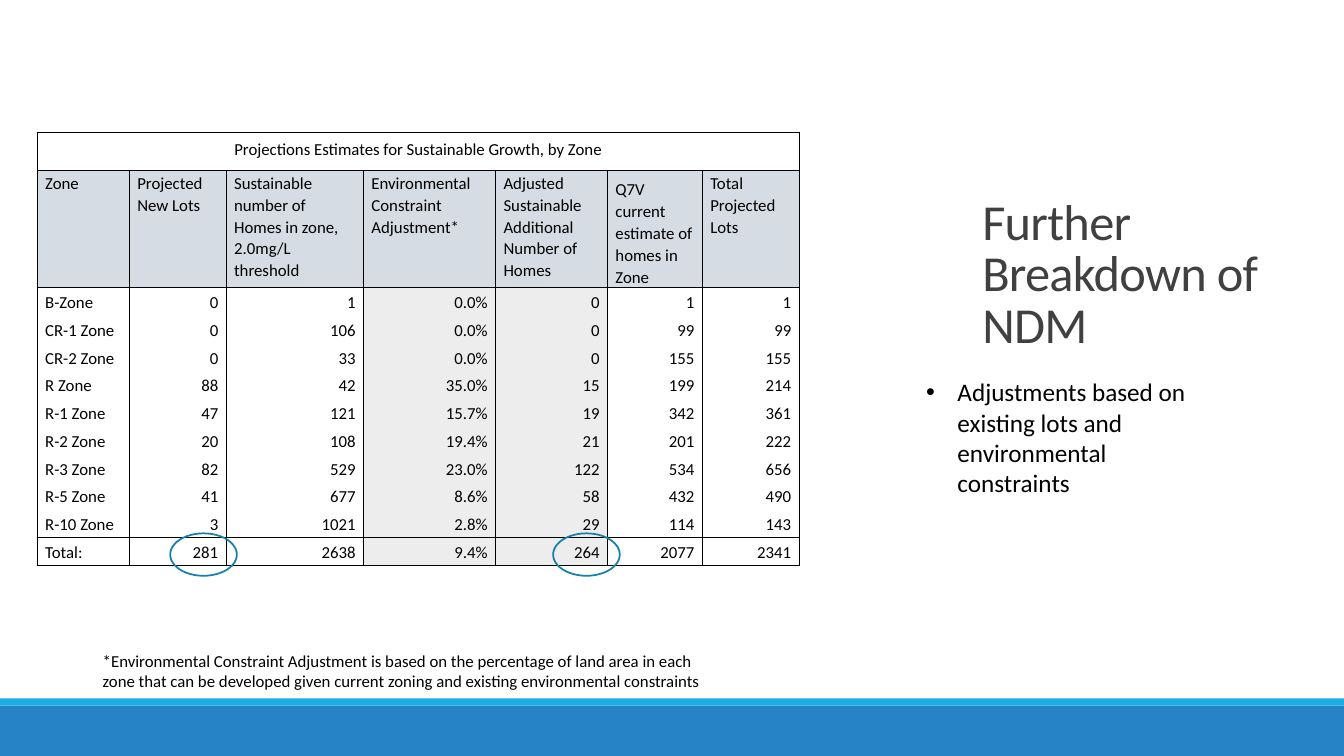
from lxml.etree import SubElement as Sub
from pptx import Presentation
from pptx.dml.color import RGBColor as Rgb
from pptx.enum.shapes import MSO_SHAPE as Geo
from pptx.enum.text import MSO_ANCHOR as Anchor, MSO_AUTO_SIZE as Fit, PP_ALIGN as Align
from pptx.oxml.ns import qn
from pptx.util import Cm, Pt

HUES = {
    "band": "2683C6", "strip": "1CADE4", "ring": "1580A9", "title": "404040",
    "text": "000000", "head": "D6DCE4", "shade": "EDEDED",
}
CAPTION = "Projections Estimates for Sustainable Growth, by Zone"
HEADS = [
    "Zone", "Projected New Lots",
    "Sustainable number of Homes in zone, 2.0mg/L threshold",
    "Environmental Constraint Adjustment*",
    "Adjusted Sustainable Additional Number of Homes",
    "Q7V current estimate of homes in Zone", "Total Projected Lots",
]
ZONES = [
    ("B-Zone", "0", "1", "0.0%", "0", "1", "1"),
    ("CR-1 Zone", "0", "106", "0.0%", "0", "99", "99"),
    ("CR-2 Zone", "0", "33", "0.0%", "0", "155", "155"),
    ("R Zone", "88", "42", "35.0%", "15", "199", "214"),
    ("R-1 Zone", "47", "121", "15.7%", "19", "342", "361"),
    ("R-2 Zone", "20", "108", "19.4%", "21", "201", "222"),
    ("R-3 Zone", "82", "529", "23.0%", "122", "534", "656"),
    ("R-5 Zone", "41", "677", "8.6%", "58", "432", "490"),
    ("R-10 Zone", "3", "1021", "2.8%", "29", "114", "143"),
    ("Total:", "281", "2638", "9.4%", "264", "2077", "2341"),
]
WIDTHS = [2.32, 2.44, 3.46, 3.33, 2.82, 2.39, 2.44]
HEIGHTS = [0.97, 2.95] + [0.7] * len(ZONES)
SHADED = (3, 4)


def hue(name):
    return Rgb.from_string(HUES[name])


def assign(item, values):
    for key, value in values.items():
        setattr(item, key, value)


def write(frame, text, size=12, color="text", **para):
    """Put one formatted paragraph in the frame and return it."""
    line = frame.paragraphs[0]
    assign(line, para)
    run = line.add_run()
    run.text = text
    assign(run.font, {"name": "Calibri", "size": Pt(size)})
    run.font.color.rgb = hue(color)
    return line


def add_bar(slide, top, height, color):
    bar = slide.shapes.add_shape(Geo.RECTANGLE, 0, Cm(top), Cm(33.87), Cm(height))
    bar.shadow.inherit = False
    bar.fill.solid()
    bar.fill.fore_color.rgb = hue(color)
    bar.line.fill.background()


def add_ring(slide, left, top):
    ring = slide.shapes.add_shape(Geo.OVAL, Cm(left), Cm(top), Cm(1.68), Cm(1.07))
    ring.shadow.inherit = False
    ring.fill.background()
    ring.line.color.rgb = hue("ring")
    ring.line.width = Pt(1.25)


def add_text(slide, box, text, size):
    frame = slide.shapes.add_textbox(*map(Cm, box)).text_frame
    frame.word_wrap = True
    return write(frame, text, size)


def add_bullet(line):
    props = line._p.get_or_add_pPr()
    props.set("marL", str(Cm(0.79)))
    props.set("indent", str(Cm(-0.79)))
    Sub(props, qn("a:buFont"), typeface="Arial")
    Sub(props, qn("a:buChar"), char="•")


def set_title(slide):
    title = slide.shapes.title
    assign(title, {"left": Cm(24.5), "top": Cm(4.93),
                   "width": Cm(9.37), "height": Cm(5.64)})
    frame = title.text_frame
    assign(frame, {"word_wrap": True, "auto_size": Fit.NONE,
                   "vertical_anchor": Anchor.MIDDLE, "margin_bottom": Cm(1.7)})
    line = write(frame, "Further Breakdown of NDM", 36, "title",
                 alignment=Align.LEFT, line_spacing=0.85)
    line.runs[0]._r.get_or_add_rPr().set("spc", "-50")


def set_edges(cell, row):
    """Rule every side, leaving the zone rows open between each other."""
    last = len(HEIGHTS) - 1
    edges = {"L": True, "R": True,
             "T": row <= 2 or row == last, "B": row <= 1 or row >= last - 1}
    props = cell._tc.get_or_add_tcPr()
    for side, shown in edges.items():
        edge = Sub(props, qn(f"a:ln{side}"), w=str(Pt(1)))
        if shown:
            Sub(Sub(edge, qn("a:solidFill")), qn("a:srgbClr"), val=HUES["text"])
        else:
            Sub(edge, qn("a:noFill"))


def fill_cell(cell, row, col, text):
    set_edges(cell, row)
    color = "head" if row == 1 else "shade" if row > 1 and col in SHADED else None
    if color:
        cell.fill.solid()
        cell.fill.fore_color.rgb = hue(color)
    else:
        cell.fill.background()
    pad = (0.28, 0.15, 0.15) if row == 0 else (0.2, 0.03, 0)
    side, top, base = map(Cm, pad)
    anchor = Anchor.MIDDLE if row > 1 else Anchor.TOP
    if (row, col) == (1, 5):
        anchor = Anchor.BOTTOM
    assign(cell, {"margin_left": side, "margin_right": side, "margin_top": top,
                  "margin_bottom": base, "vertical_anchor": anchor})
    align = Align.CENTER if row == 0 else Align.RIGHT if row > 1 and col else Align.LEFT
    if text:
        write(cell.text_frame, text, alignment=align, line_spacing=1.07)


def add_grid(slide):
    rows = [[CAPTION] + [""] * (len(HEADS) - 1), HEADS, *ZONES]
    table = slide.shapes.add_table(
        len(rows), len(HEADS), Cm(0.94), Cm(3.33),
        Cm(sum(WIDTHS)), Cm(sum(HEIGHTS))).table
    assign(table, {"first_row": False, "horz_banding": False})
    for col, width in zip(table.columns, WIDTHS):
        col.width = Cm(width)
    for row, height in zip(table.rows, HEIGHTS):
        row.height = Cm(height)
    table.cell(0, 0).merge(table.cell(0, len(HEADS) - 1))
    for r, texts in enumerate(rows):
        for c, text in enumerate(texts):
            fill_cell(table.cell(r, c), r, c, text)


def main():
    deck = Presentation()
    assign(deck, {"slide_width": Cm(33.87), "slide_height": Cm(19.05)})
    slide = deck.slides.add_slide(deck.slide_layouts[5])
    add_bar(slide, 17.78, 1.27, "band")
    add_bar(slide, 17.6, 0.18, "strip")
    set_title(slide)
    add_grid(slide)
    add_bullet(add_text(
        slide, (23.09, 9.37, 7.57, 3.33),
        "Adjustments based on existing lots and environmental constraints", 18))
    add_text(
        slide, (2.34, 16.28, 15.77, 1.27),
        "*Environmental Constraint Adjustment is based on the percentage of land area "
        "in each zone that can be developed given current zoning and existing "
        "environmental constraints", 12)
    for left in (4.29, 13.94):
        add_ring(slide, left, 13.44)
    deck.save("out.pptx")


if __name__ == "__main__":
    main()
